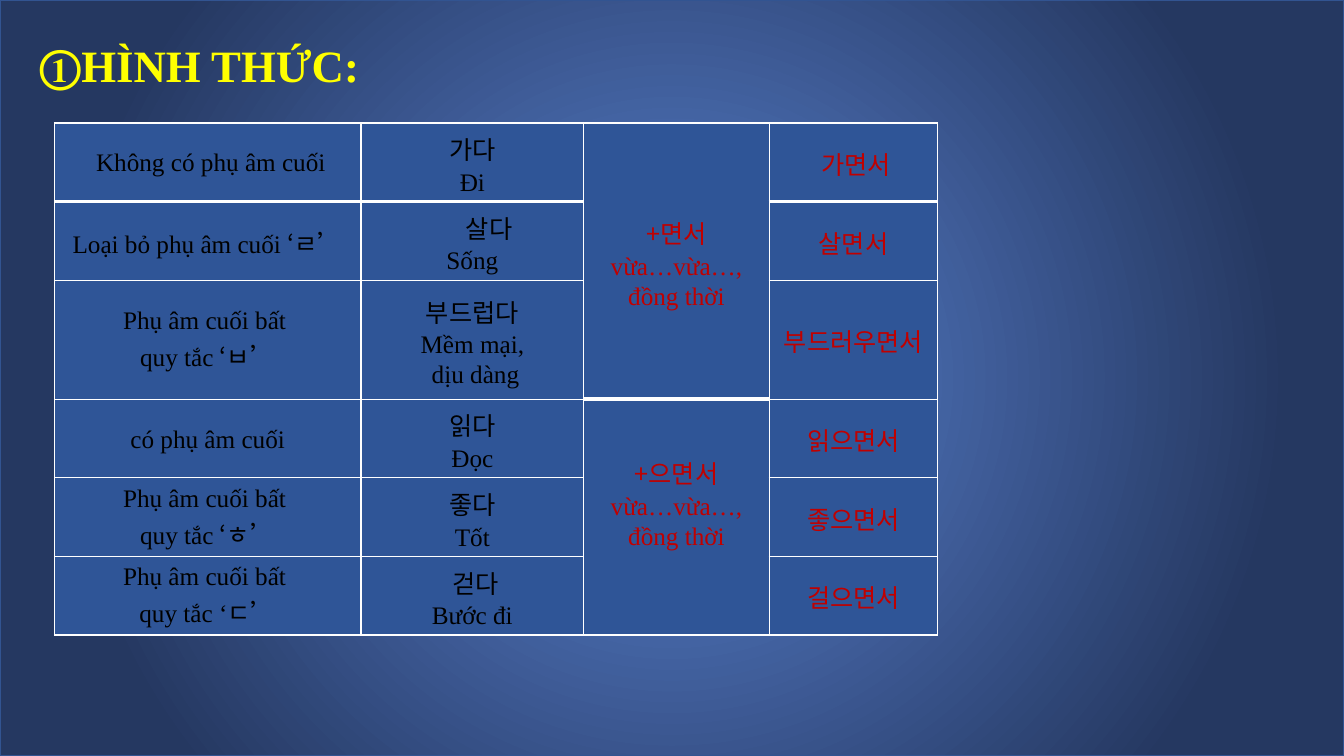
from lxml import etree
from pptx import Presentation
from pptx import util as u
from pptx.dml.color import RGBColor
from pptx.enum import shapes, text
from pptx.oxml import parse_xml
from pptx.oxml.ns import nsdecls, qn

YELLOW = RGBColor(0xFF, 0xFF, 0x00)
BLACK = RGBColor(0x00, 0x00, 0x00)
RED = RGBColor(0xC0, 0x00, 0x00)
WHITE = RGBColor(0xFF, 0xFF, 0xFF)
CELL_BLUE = RGBColor(0x2F, 0x55, 0x97)
EDGE_BLUE = RGBColor(0x32, 0x54, 0x91)
GLOW_BLUE = RGBColor(0x5A, 0x83, 0xD3)
NIGHT_BLUE = RGBColor(0x25, 0x38, 0x61)

LATIN = "Times New Roman"
KOREAN = "Noto Sans CJK KR"
LINE_SPACING = 1.07
COLUMN_WIDTHS = [3.04, 2.21, 1.84, 1.67]
ROW_HEIGHTS = [0.78, 0.78, 1.18, 0.78, 0.78, 0.78]
ENDING_COLUMN = 2
HEAVY_BELOW = [0, 0, 2, 0]
MERGED_ROWS = [(0, 2), (3, 5)]

FORMS = [
    [" Không có phụ âm cuối", "가다\nĐi", "+면서\nvừa…vừa…,\nđồng thời", " 가면서"],
    ["Loại bỏ phụ âm cuối |‘ㄹ’", "살다\nSống", "", "살면서"],
    ["Phụ âm cuối bất \nquy tắc |‘ㅂ’", "부드럽다\nMềm mại,\n dịu dàng", "", "부드러우면서"],
    ["có phụ âm cuối", "읽다\nĐọc", "+으면서\nvừa…vừa…,\nđồng thời", "읽으면서"],
    ["Phụ âm cuối bất \nquy tắc |‘ㅎ’", "좋다\nTốt", "", "좋으면서"],
    ["Phụ âm cuối bất \nquy tắc ‘|ㄷ’", " |걷다\nBước đi", "", "걸으면서"],
]


def apply(target, values):
    for name, value in values.items():
        setattr(target, name, value)


class GrammarSlide:
    def __init__(self, deck):
        self.slide = deck.slides.add_slide(deck.slide_layouts[5])
        self.size = deck.slide_width, deck.slide_height

    def backdrop(self):
        panel = self.slide.shapes.add_shape(shapes.MSO_SHAPE.RECTANGLE, 0, 0, *self.size)
        panel.shadow.inherit = False
        panel.line.color.rgb = EDGE_BLUE
        panel.line.width = u.Pt(1)
        panel.fill.gradient()
        glow = panel._element.spPr.find(qn("a:gradFill"))
        glow.getparent().replace(glow, parse_xml(
            f'<a:gradFill {nsdecls("a")} rotWithShape="1"><a:gsLst>'
            f'<a:gs pos="0"><a:srgbClr val="{GLOW_BLUE}"/></a:gs>'
            f'<a:gs pos="80000"><a:srgbClr val="{NIGHT_BLUE}"/></a:gs></a:gsLst>'
            '<a:path path="circle"><a:fillToRect l="50000" t="50000" r="50000" b="50000"/>'
            '</a:path></a:gradFill>'))
        self.slide.shapes._spTree.insert(2, panel._element)

    def heading(self, wording, left, top, width, height):
        title = self.slide.shapes.title
        apply(title, dict(left=u.Inches(left), top=u.Inches(top),
                          width=u.Inches(width), height=u.Inches(height)))
        frame = title.text_frame
        apply(frame, dict(word_wrap=True, vertical_anchor=text.MSO_ANCHOR.TOP,
                          auto_size=text.MSO_AUTO_SIZE.SHAPE_TO_FIT_TEXT))
        paragraph = frame.paragraphs[0]
        apply(paragraph, dict(alignment=text.PP_ALIGN.JUSTIFY, line_spacing=LINE_SPACING,
                              space_before=u.Pt(0), space_after=u.Pt(8)))
        properties = paragraph._p.get_or_add_pPr()
        properties.set("marL", str(u.Inches(0.38)))
        properties.set("indent", str(u.Inches(-0.38)))
        etree.SubElement(properties, qn("a:buAutoNum"), type="circleNumDbPlain")
        self.run(paragraph, wording, YELLOW, size=u.Pt(32), bold=True)

    def run(self, paragraph, wording, color, **format_values):
        run = paragraph.add_run()
        run.text = wording
        typeface = KOREAN if any("ㄱ" <= letter <= "힣" for letter in wording) else LATIN
        apply(run.font, dict(name=typeface, **format_values))
        run.font.color.rgb = color
        etree.SubElement(run._r.get_or_add_rPr(), qn("a:ea"), typeface=typeface)

    def borders(self, cell, row, column):
        heavy_top = row - 1 == HEAVY_BELOW[column]
        heavy_bottom = row in (0, HEAVY_BELOW[column])
        widths = dict(lnL=1, lnR=1, lnT=3 if heavy_top else 1, lnB=3 if heavy_bottom else 1)
        properties = cell._tc.get_or_add_tcPr()
        for side, points in widths.items():
            properties.append(parse_xml(
                f'<a:{side} {nsdecls("a")} w="{u.Pt(points)}"><a:solidFill>'
                f'<a:srgbClr val="{WHITE}"/></a:solidFill></a:{side}>'))

    def cell(self, cell, wording, row, column):
        self.borders(cell, row, column)
        cell.fill.solid()
        cell.fill.fore_color.rgb = CELL_BLUE
        apply(cell, dict(vertical_anchor=text.MSO_ANCHOR.MIDDLE,
                         margin_left=u.Inches(0.07), margin_right=u.Inches(0.07),
                         margin_top=0, margin_bottom=0))
        color = RED if column >= ENDING_COLUMN else BLACK
        for index, line in enumerate(wording.split("\n") if wording else []):
            frame = cell.text_frame
            paragraph = frame.add_paragraph() if index else frame.paragraphs[0]
            apply(paragraph, dict(alignment=text.PP_ALIGN.CENTER, line_spacing=LINE_SPACING))
            for part in line.split("|"):
                self.run(paragraph, part, color, size=u.Pt(18))

    def table(self, left, top):
        frame = self.slide.shapes.add_table(
            len(ROW_HEIGHTS), len(COLUMN_WIDTHS), u.Inches(left), u.Inches(top),
            u.Inches(sum(COLUMN_WIDTHS)), u.Inches(sum(ROW_HEIGHTS)))
        grid = frame.table
        apply(grid, dict(first_row=False, horz_banding=False))
        for column, width in zip(grid.columns, COLUMN_WIDTHS):
            column.width = u.Inches(width)
        for row, height in zip(grid.rows, ROW_HEIGHTS):
            row.height = u.Inches(height)
        for row, wordings in enumerate(FORMS):
            for column, wording in enumerate(wordings):
                self.cell(grid.cell(row, column), wording, row, column)
        for first, last in MERGED_ROWS:
            grid.cell(first, ENDING_COLUMN).merge(grid.cell(last, ENDING_COLUMN))
        grid.cell(3, ENDING_COLUMN).margin_bottom = u.Inches(0.31)
        live_verb = grid.cell(1, 1).text_frame.paragraphs[0]
        live_verb._p.get_or_add_pPr().set("indent", str(u.Inches(0.33)))


def main():
    deck = Presentation()
    deck.slide_width, deck.slide_height = u.Inches(13.33), u.Inches(7.5)
    page = GrammarSlide(deck)
    page.backdrop()
    page.heading("HÌNH THỨC:", 0.29, 0.29, 3.84, 0.68)
    page.table(0.54, 1.22)
    deck.save("out.pptx")


if __name__ == "__main__":
    main()
